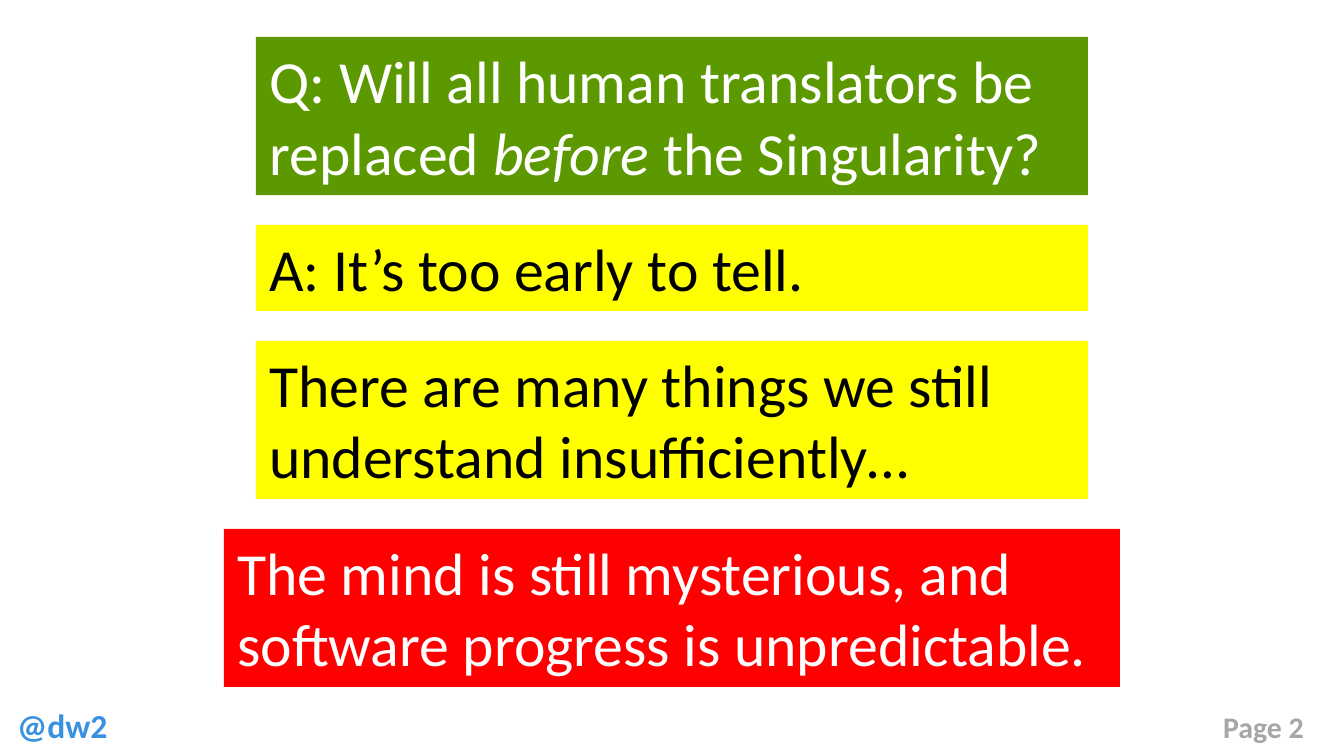
import pptx
import pptx.util
from pptx.dml.color import RGBColor
from pptx.enum.shapes import MSO_SHAPE
from pptx.enum.text import MSO_ANCHOR, MSO_AUTO_SIZE, PP_ALIGN

WHITE = RGBColor(0xFF, 0xFF, 0xFF)
BLACK = RGBColor(0x00, 0x00, 0x00)
GREEN = RGBColor(0x5C, 0x99, 0x00)
YELLOW = RGBColor(0xFF, 0xFF, 0x00)
RED = RGBColor(0xFF, 0x00, 0x00)
BLUE = RGBColor(0x38, 0x92, 0xE0)
GREY = RGBColor(0xA6, 0xA6, 0xA6)

# Content: runs are (text, italic)
QUESTION = [("Q: Will all human translators be replaced ", False),
            ("before", True), (" the Singularity?", False)]
# runs, lines, width, fill, font colour
BANNERS = [
    (QUESTION, 2, 832, GREEN, WHITE),
    ([("A: It’s too early to tell.", False)], 1, 832, YELLOW, BLACK),
    ([("There are many things we still understand insufficiently…", False)],
     2, 832, YELLOW, BLACK),
    ([("The mind is still mysterious, and software progress is unpredictable.",
       False)], 2, 896, RED, WHITE),
]
# text, box, size, colour
FOOTERS = [
    ("@dw2", (4, 698, 118, 54), 18, BLUE),
    ("Page 2", (1210, 702, 129, 50), 16, GREY),
]

# Layout in px
SLIDE_WIDTH, SLIDE_HEIGHT = 1344, 756
FIRST_TOP, GAP = 37, 30
BANNER_HEIGHTS = {1: 86, 2: 158}
EMU_PER_PX = 914400 / 134.4


def emu(px):
    return pptx.util.Emu(round(px * EMU_PER_PX))


def place(shape, box):
    shape.left, shape.top, shape.width, shape.height = map(emu, box)


def write(shape, runs, size, color, bold=False, wrap=True):
    frame = shape.text_frame
    frame.word_wrap = wrap
    frame.auto_size = MSO_AUTO_SIZE.SHAPE_TO_FIT_TEXT
    frame.vertical_anchor = MSO_ANCHOR.TOP
    paragraph = frame.paragraphs[0]
    paragraph.alignment = PP_ALIGN.LEFT
    for text, italic in runs:
        run = paragraph.add_run()
        run.text = text
        run.font.name = "Calibri"
        run.font.size = pptx.util.Pt(size)
        run.font.bold = bold
        run.font.italic = italic
        run.font.color.rgb = color


presentation = pptx.Presentation()
presentation.slide_width = emu(SLIDE_WIDTH)
presentation.slide_height = emu(SLIDE_HEIGHT)
slide = presentation.slides.add_slide(presentation.slide_layouts[5])

# Footer texts
for text, box, size, color in FOOTERS:
    footer = slide.shapes.add_textbox(*map(emu, box))
    write(footer, [(text, False)], size, color, bold=True, wrap=False)

# Centred stack of banners, the question being the title
top = FIRST_TOP
for runs, lines, width, fill, color in BANNERS:
    height = BANNER_HEIGHTS[lines]
    box = ((SLIDE_WIDTH - width) / 2, top, width, height)
    if runs is QUESTION:
        banner = slide.shapes.title
        place(banner, box)
    else:
        banner = slide.shapes.add_shape(MSO_SHAPE.RECTANGLE, *map(emu, box))
        banner.shadow.inherit = False
    banner.fill.solid()
    banner.fill.fore_color.rgb = fill
    banner.line.fill.background()
    write(banner, runs, 32, color)
    top += height + GAP

presentation.save("out.pptx")
